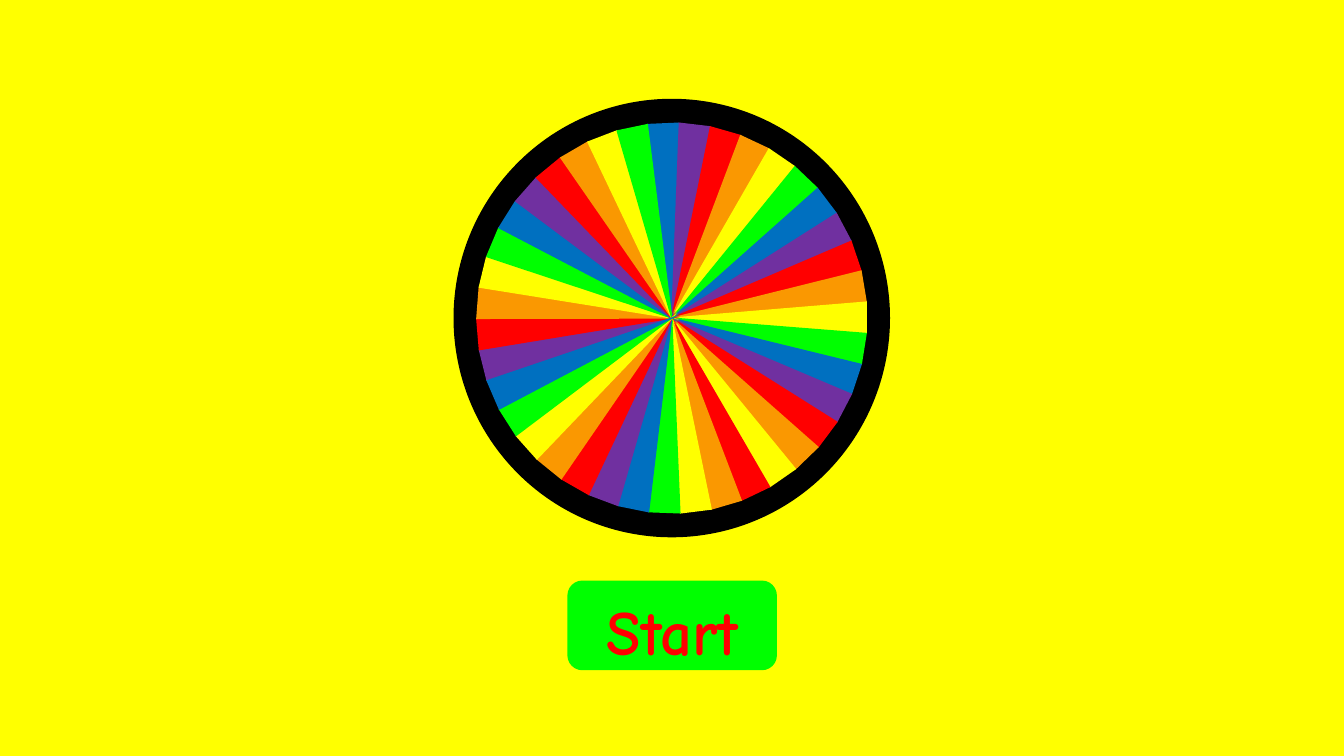
import itertools
import math

import pptx
import pptx.dml.color
import pptx.enum.shapes
import pptx.enum.text
import pptx.util

Cm = pptx.util.Cm
RGBColor = pptx.dml.color.RGBColor
MSO_SHAPE = pptx.enum.shapes.MSO_SHAPE

BLUE = RGBColor(0x00, 0x70, 0xC0)
PURPLE = RGBColor(0x70, 0x30, 0xA0)
RED = RGBColor(0xFF, 0x00, 0x00)
ORANGE = RGBColor(0xFA, 0x98, 0x01)
YELLOW = RGBColor(0xFF, 0xFF, 0x00)
GREEN = RGBColor(0x00, 0xFF, 0x00)
BLACK = RGBColor(0x00, 0x00, 0x00)

RAINBOW = [BLUE, PURPLE, RED, ORANGE, YELLOW, GREEN]
WEDGE_COLOURS = RAINBOW[:] * 3
WEDGE_COLOURS = WEDGE_COLOURS[:17] + (RAINBOW * 4)[2:]
FIRST_ANGLE = 177.5


def add_plain(shapes, preset, left, top, width, height, colour):
    """Add a flat filled shape without outline or shadow."""
    plain = shapes.add_shape(preset, left, top, width, height)
    plain.shadow.inherit = False
    plain.fill.solid()
    plain.fill.fore_color.rgb = colour
    plain.line.fill.background()
    return plain


def add_wheel(slide, left, top, width, height):
    """Draw the black rim and the ring of coloured wedges inside the box."""
    add_plain(slide.shapes, MSO_SHAPE.OVAL, left, top, width, height, BLACK)
    wedges = slide.shapes.add_group_shape()
    hub_x, hub_y = left + width / 2, top + height / 2
    wedge_width, wedge_height, radius = Cm(0.81), Cm(5.11), Cm(2.36)
    count = len(WEDGE_COLOURS)
    for index in itertools.chain(range(22), range(28, count), range(22, 28)):
        angle = (FIRST_ANGLE + index * 360 / count) % 360
        turn = math.radians(angle)
        wedge_x = hub_x - radius * math.sin(turn) - wedge_width / 2
        wedge_y = hub_y + radius * math.cos(turn) - wedge_height / 2
        wedge = add_plain(wedges.shapes, MSO_SHAPE.ISOSCELES_TRIANGLE,
                          round(wedge_x), round(wedge_y),
                          wedge_width, wedge_height, WEDGE_COLOURS[index])
        wedge.rotation = angle


def add_start_button(slide, left, top, width, height):
    """Draw the green button in the box and set the title on it as its label."""
    add_plain(slide.shapes, MSO_SHAPE.ROUNDED_RECTANGLE,
              left, top, width, height, GREEN)
    label = slide.shapes.title
    label.element.getparent().append(label.element)
    label.left, label.top = left - Cm(0.48), top + Cm(0.58)
    label.width, label.height = Cm(6.25), Cm(1.7)
    frame = label.text_frame
    frame.text = "Start"
    frame.word_wrap = True
    frame.auto_size = pptx.enum.text.MSO_AUTO_SIZE.NONE
    frame.vertical_anchor = pptx.enum.text.MSO_ANCHOR.BOTTOM
    paragraph = frame.paragraphs[0]
    paragraph.alignment = pptx.enum.text.PP_ALIGN.CENTER
    paragraph.line_spacing = 0.7
    paragraph.space_before = pptx.util.Pt(0)
    font = paragraph.runs[0].font
    font.name = "Comic Neue"
    font.size = pptx.util.Pt(45)
    font.bold = True
    font.color.rgb = RED


def main():
    """Build the spinning wheel slide and save it."""
    deck = pptx.Presentation()
    deck.slide_width, deck.slide_height = Cm(33.87), Cm(19.05)
    slide = deck.slides.add_slide(deck.slide_layouts[5])
    slide.background.fill.solid()
    slide.background.fill.fore_color.rgb = YELLOW
    add_wheel(slide, Cm(11.43), Cm(2.49), Cm(11), Cm(11.05))
    add_start_button(slide, Cm(14.3), Cm(14.63), Cm(5.28), Cm(2.26))
    deck.save("out.pptx")


if __name__ == "__main__":
    main()
